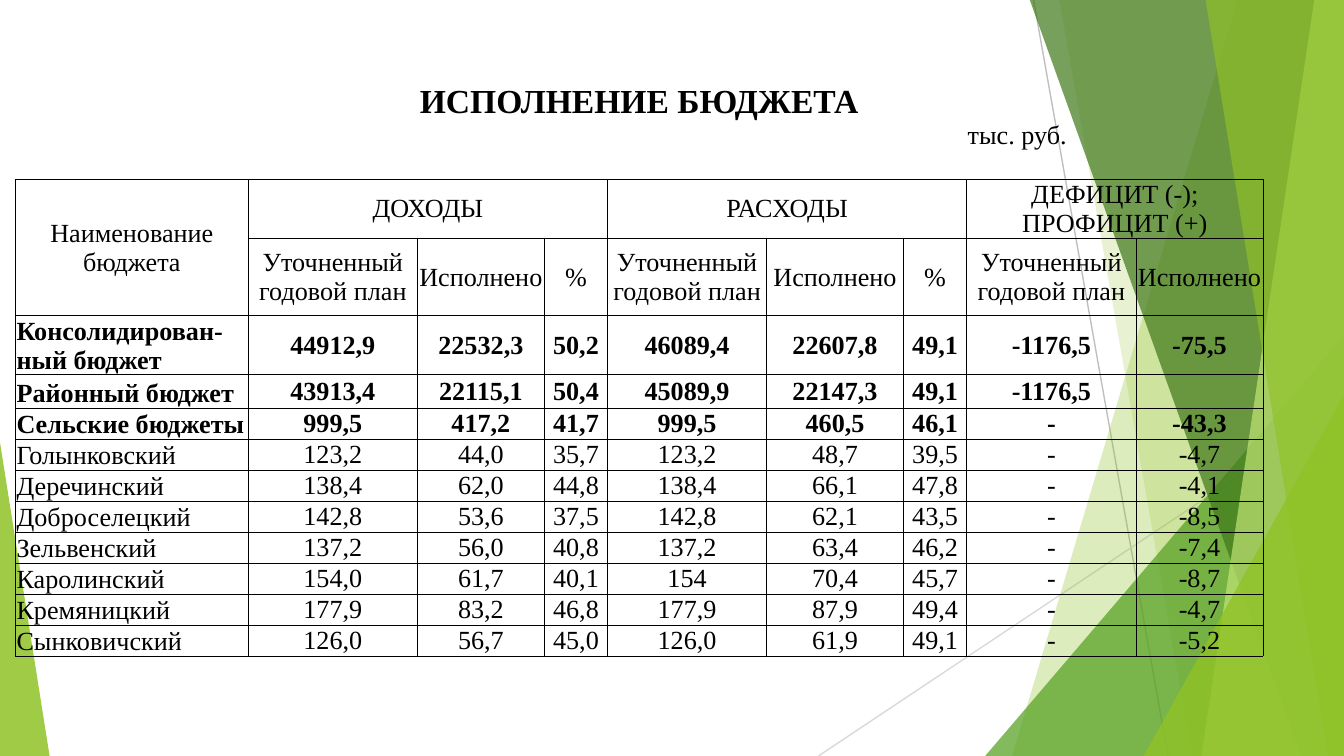
from dataclasses import dataclass

from lxml import etree
from pptx import Presentation
from pptx.dml.color import RGBColor
from pptx.enum.shapes import MSO_CONNECTOR, MSO_SHAPE
from pptx.enum.text import MSO_ANCHOR, PP_ALIGN
from pptx.oxml.ns import qn
from pptx.util import Pt

STRAIGHT = MSO_CONNECTOR.STRAIGHT
TRIANGLE = MSO_SHAPE.ISOSCELES_TRIANGLE
TOP, MIDDLE, BOTTOM = MSO_ANCHOR.TOP, MSO_ANCHOR.MIDDLE, MSO_ANCHOR.BOTTOM
LEFT, CENTER = PP_ALIGN.LEFT, PP_ALIGN.CENTER

WIDTH, HEIGHT = 720, 405
FONT = "Times New Roman"
BLACK = "000000"
INSET = 0.5
TABLE_LEFT, TABLE_TOP = 8.4, 44
COLUMN_WIDTHS = (124.6, 72.7, 18, 46.9, 21.1, 33.9, 85.2, 15.1, 58.3, 6.5, 27.4, 90.7, 37.4, 30.6)
ROW_HEIGHTS = (20.4, 31.6, 31.2, 41.7, 31.6) + (16.6,) * 9

TITLE_STARTS = (0,)
UNIT_STARTS = (0, 1, 2, 4, 6, 8, 10, 11, 13)
GROUP_STARTS = (0, 1, 6, 11)
DATA_STARTS = (0, 1, 3, 5, 6, 7, 9, 11, 12)

PLAN, DONE = "Уточненный годовой план", "Исполнено"
TITLE_ROW, UNIT_ROW, GROUP_ROW, LABEL_ROW = range(4)
FIRST_DATA_ROW, FIRST_VILLAGE_ROW = 4, 7
HEADINGS = (
    (TITLE_STARTS, ("ИСПОЛНЕНИЕ БЮДЖЕТА",)),
    (UNIT_STARTS, ("",) * 7 + ("тыс. руб.", "")),
    (GROUP_STARTS, ("Наименование\nбюджета", "ДОХОДЫ", "РАСХОДЫ", "ДЕФИЦИТ (-); ПРОФИЦИТ (+)")),
    (DATA_STARTS, ("", PLAN, DONE, "%", PLAN, DONE, "%", PLAN, DONE)),
)
BUDGETS = (
    ("Консолидирован-ный бюджет", "44912,9", "22532,3", "50,2", "46089,4", "22607,8", "49,1", "-1176,5", "-75,5"),
    ("Районный бюджет", "43913,4", "22115,1", "50,4", "45089,9", "22147,3", "49,1", "-1176,5", ""),
    ("Сельские бюджеты", "999,5", "417,2", "41,7", "999,5", "460,5", "46,1", "-", "-43,3"),
    ("Голынковский", "123,2", "44,0", "35,7", "123,2", "48,7", "39,5", "-", "-4,7"),
    ("Деречинский", "138,4", "62,0", "44,8", "138,4", "66,1", "47,8", "-", "-4,1"),
    ("Доброселецкий", "142,8", "53,6", "37,5", "142,8", "62,1", "43,5", "-", "-8,5"),
    ("Зельвенский", "137,2", "56,0", "40,8", "137,2", "63,4", "46,2", "-", "-7,4"),
    ("Каролинский", "154,0", "61,7", "40,1", "154", "70,4", "45,7", "-", "-8,7"),
    ("Кремяницкий", "177,9", "83,2", "46,8", "177,9", "87,9", "49,4", "-", "-4,7"),
    ("Сынковичский", "126,0", "56,7", "45,0", "126,0", "61,9", "49,1", "-", "-5,2"),
)


@dataclass
class Ray:
    start: tuple[float, float]
    end: tuple[float, float]
    color: str


@dataclass
class Band:
    top_x: float
    bottom_x: float
    color: str
    opacity: int


@dataclass
class Corner:
    left: float
    top: float
    width: float
    apex: float
    color: str
    opacity: int


RAYS = (
    Ray((553.7, 0), (625.7, HEIGHT), "BFBFBF"),
    Ray((WIDTH, 217.4), (438.5, HEIGHT), "D9D9D9"),
)
FACETS = (
    Band(663.1, 542.2, "90C226", 30),
    Band(567.4, 638.6, "90C226", 20),
    Corner(527.8, 180, 192.2, 1, "54A021", 72),
    Band(551.5, 697, "3F7819", 70),
    Band(704.2, 643.7, "C0E474", 70),
    Band(645.8, 711.4, "90C226", 65),
    Corner(612.7, 211.7, 107.3, 1, "90C226", 80),
    Corner(0, 236.9, 26.6, 0, "90C226", 85),
)


def rgb(color: str) -> RGBColor:
    """Turn a hex string into a colour."""
    return RGBColor.from_string(color)


def draw_ray(page, ray: Ray) -> None:
    """Draw one thin background line."""
    line = page.shapes.add_connector(STRAIGHT, *map(Pt, ray.start + ray.end))
    line.line.color.rgb = rgb(ray.color)
    line.line.width = Pt(0.75)
    etree.SubElement(line._element.spPr, qn("a:effectLst"))


def draw_facet(page, facet: Band | Corner) -> None:
    """Draw one translucent background facet."""
    if isinstance(facet, Band):
        builder = page.shapes.build_freeform(Pt(facet.top_x), Pt(-0.6), scale=1.0)
        outline = ((WIDTH, -0.6), (WIDTH, HEIGHT), (facet.bottom_x, HEIGHT))
        builder.add_line_segments([(Pt(x), Pt(y)) for x, y in outline], close=True)
        shape = builder.convert_to_shape()
    else:
        frame = (facet.left, facet.top, facet.width, HEIGHT - facet.top)
        shape = page.shapes.add_shape(TRIANGLE, *map(Pt, frame))
        shape.adjustments[0] = facet.apex
    shape.shadow.inherit = False
    shape.line.fill.background()
    shape.fill.solid()
    shape.fill.fore_color.rgb = rgb(facet.color)
    color = shape._element.spPr.find(qn("a:solidFill"))[0]
    etree.SubElement(color, qn("a:alpha"), val=str(facet.opacity * 1000))


def set_borders(cell, sides: str) -> None:
    """Rule the named sides of a cell and clear the others."""
    properties = cell._tc.get_or_add_tcPr()
    for side in "LRTB":
        line = etree.SubElement(properties, qn(f"a:ln{side}"), w=str(Pt(0.5)))
        if side in sides:
            fill = etree.SubElement(line, qn("a:solidFill"))
            etree.SubElement(fill, qn("a:srgbClr"), val=BLACK)
        else:
            etree.SubElement(line, qn("a:noFill"))


def prepare_cell(cell, row: int) -> None:
    """Give a cell its borders, clear fill, insets and empty-text size."""
    set_borders(cell, {TITLE_ROW: "", UNIT_ROW: "B"}.get(row, "LRTB"))
    cell.fill.background()
    cell.margin_left = cell.margin_right = cell.margin_top = cell.margin_bottom = Pt(INSET)
    paragraph = cell.text_frame.paragraphs[0]._p
    etree.SubElement(paragraph, qn("a:endParaRPr"), sz="1400")


def write_cell(cell, text: str, row: int, column: int) -> None:
    """Write and format the text of one cell."""
    is_name = row >= FIRST_DATA_ROW and column == 0
    is_bold = row == TITLE_ROW or FIRST_DATA_ROW <= row < FIRST_VILLAGE_ROW
    cell.vertical_anchor = TOP if row == UNIT_ROW else BOTTOM if is_name else MIDDLE
    if is_name or row < FIRST_DATA_ROW:
        cell.margin_bottom = 0
    cell.text_frame.text = text
    for para in cell.text_frame.paragraphs:
        para.alignment = LEFT if is_name or row == UNIT_ROW else CENTER
        for span in para.runs:
            span.font.name = FONT
            span.font.size = Pt(18 if row == TITLE_ROW else 14)
            span.font.bold = is_bold
            span.font.color.rgb = rgb(BLACK)


def draw_table(page) -> None:
    """Draw the budget table with its title and unit rows."""
    frame = page.shapes.add_table(
        len(ROW_HEIGHTS), len(COLUMN_WIDTHS), Pt(TABLE_LEFT), Pt(TABLE_TOP),
        Pt(sum(COLUMN_WIDTHS)), Pt(sum(ROW_HEIGHTS)),
    )
    table = frame.table
    table.first_row = table.horz_banding = False
    for column, width in zip(table.columns, COLUMN_WIDTHS):
        column.width = Pt(width)
    for index, height in enumerate(ROW_HEIGHTS):
        table.rows[index].height = Pt(height)
        for cell in table.rows[index].cells:
            prepare_cell(cell, index)
    table.cell(GROUP_ROW, 0).merge(table.cell(LABEL_ROW, 0))
    lines = HEADINGS + tuple((DATA_STARTS, budget) for budget in BUDGETS)
    for row, (starts, texts) in enumerate(lines):
        ends = starts[1:] + (len(COLUMN_WIDTHS),)
        for start, end, text in zip(starts, ends, texts):
            cell = table.cell(row, start)
            if end - start > 1:
                cell.merge(table.cell(row, end - 1))
            if text:
                write_cell(cell, text, row, start)


def main() -> None:
    """Build the deck and save it."""
    deck = Presentation()
    deck.slide_width, deck.slide_height = Pt(WIDTH), Pt(HEIGHT)
    page = deck.slides.add_slide(deck.slide_layouts[6])
    for ray in RAYS:
        draw_ray(page, ray)
    for facet in FACETS:
        draw_facet(page, facet)
    draw_table(page)
    deck.save("out.pptx")


if __name__ == "__main__":
    main()
